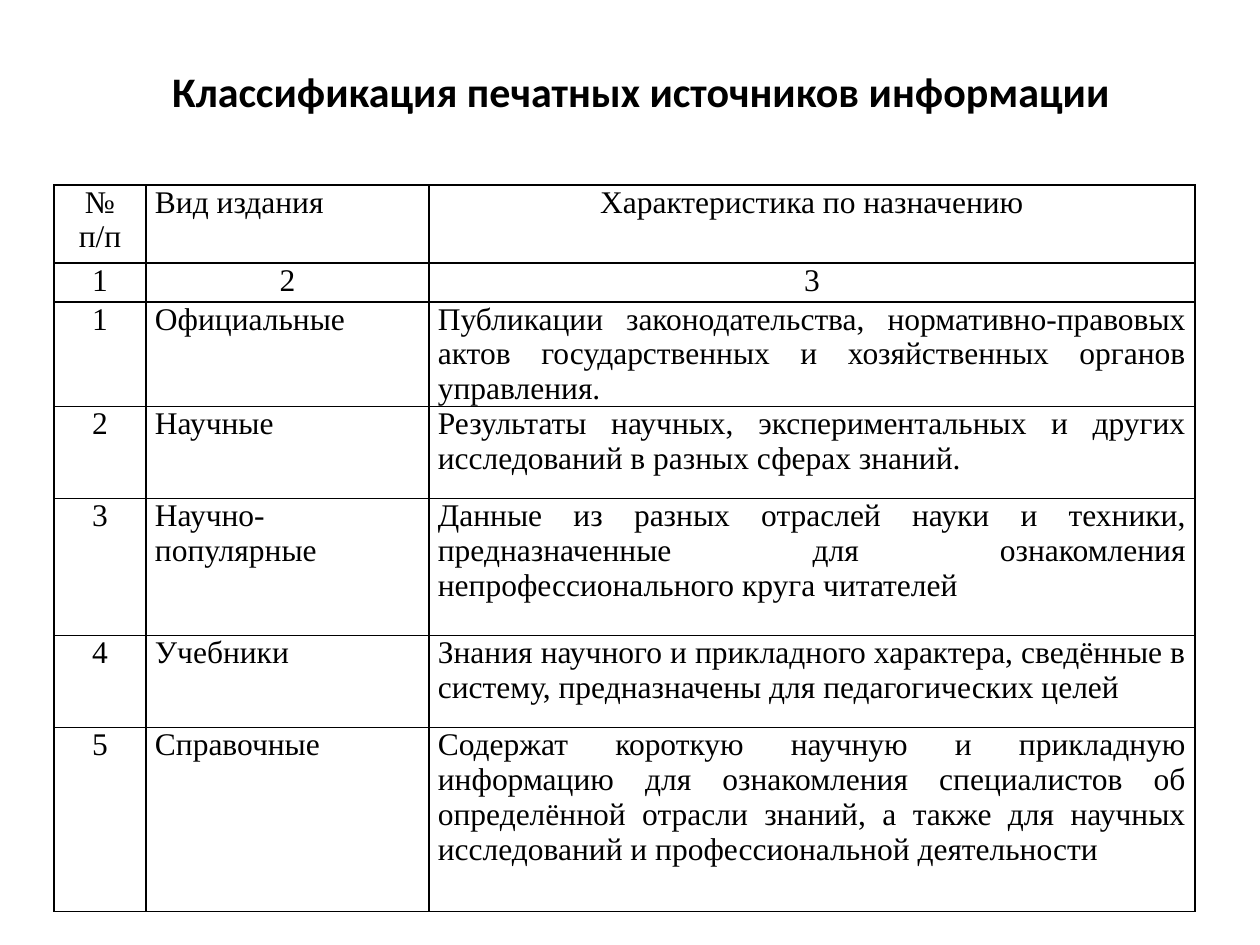
import pptx
import pptx.util
import pptx.dml.color
import pptx.enum.text
import pptx.oxml
import pptx.oxml.ns

SCALE = 914400 // 126  # EMU in one px
COLORS = {"ink": "000000", "page": "FFFFFF"}
ALIGN = pptx.enum.text.PP_ALIGN
ANCHOR = pptx.enum.text.MSO_ANCHOR

TITLE = "Классификация печатных источников информации"
COLS = [92, 283, 766]
ROWS = [78, 39, 92, 92, 137, 92, 184]
HEAD = [
    ("№\nп/п", "Вид издания", "Характеристика по назначению"),
    ("1", "2", "3"),
]
BODY = [
    ("1", "Официальные",
     "Публикации законодательства, нормативно-правовых актов "
     "государственных и хозяйственных органов управления."),
    ("2", "Научные",
     "Результаты научных, экспериментальных и других исследований "
     "в разных сферах знаний."),
    ("3", "Научно-популярные",
     "Данные из разных отраслей науки и техники, предназначенные для "
     "ознакомления непрофессионального круга читателей"),
    ("4", "Учебники",
     "Знания научного и прикладного характера, сведённые в систему, "
     "предназначены для педагогических целей"),
    ("5", "Справочные",
     "Содержат короткую научную и прикладную информацию для ознакомления "
     "специалистов об определённой отрасли знаний, а также для научных "
     "исследований и профессиональной деятельности "),
]


def px(size):
    return pptx.util.Emu(size * SCALE)


def color(name):
    return pptx.dml.color.RGBColor.from_string(COLORS[name])


def write(frame, text, align, font, size, bold=False):
    """Fill a text frame, one paragraph for each line."""
    for i, line in enumerate(text.split("\n")):
        para = frame.add_paragraph() if i else frame.paragraphs[0]
        para.alignment = align
        run = para.add_run()
        run.text = line
        run.font.name = font
        run.font.size = pptx.util.Pt(size)
        run.font.bold = bold
        run.font.color.rgb = color("ink")


def add_title(slide):
    title = slide.shapes.title
    title.left, title.top, title.width, title.height = map(px, (74, 37, 1134, 107))
    title.text_frame.vertical_anchor = ANCHOR.MIDDLE
    write(title.text_frame, TITLE, ALIGN.CENTER, "Calibri", 24, True)


def border(cell):
    """Draw a 1 pt line on each side; lines come before the fill."""
    props = cell._tc.get_or_add_tcPr()
    for i, side in enumerate(("lnL", "lnR", "lnT", "lnB")):
        line = pptx.oxml.parse_xml(
            f'<a:{side} {pptx.oxml.ns.nsdecls("a")} w="12700"><a:solidFill>'
            f'<a:srgbClr val="{COLORS["ink"]}"/></a:solidFill></a:{side}>')
        props.insert(i, line)


def set_cell(cell, text, align):
    cell.margin_left = cell.margin_right = px(9)
    cell.margin_top = cell.margin_bottom = 0
    cell.vertical_anchor = ANCHOR.TOP
    cell.fill.background()
    border(cell)
    write(cell.text_frame, text, align, "Times New Roman", 18)


def add_table(slide):
    data = HEAD + BODY
    table = slide.shapes.add_table(
        len(ROWS), len(COLS), px(54), px(185), px(sum(COLS)), px(sum(ROWS))).table
    table.first_row = table.horz_banding = False
    for col, width in zip(table.columns, COLS):
        col.width = px(width)
    for row, height in zip(table.rows, ROWS):
        row.height = px(height)
    for r, texts in enumerate(data):
        for c, text in enumerate(texts):
            # Body text and the kind heading are justified
            just = (r >= len(HEAD) and c > 0) or (r, c) == (0, 1)
            align = ALIGN.JUSTIFY if just else ALIGN.CENTER
            set_cell(table.cell(r, c), text, align)


def main():
    deck = pptx.Presentation()
    deck.slide_width, deck.slide_height = px(1260), px(945)
    slide = deck.slides.add_slide(deck.slide_layouts[5])
    slide.background.fill.solid()
    slide.background.fill.fore_color.rgb = color("page")
    add_title(slide)
    add_table(slide)
    deck.save("out.pptx")


if __name__ == "__main__":
    main()
